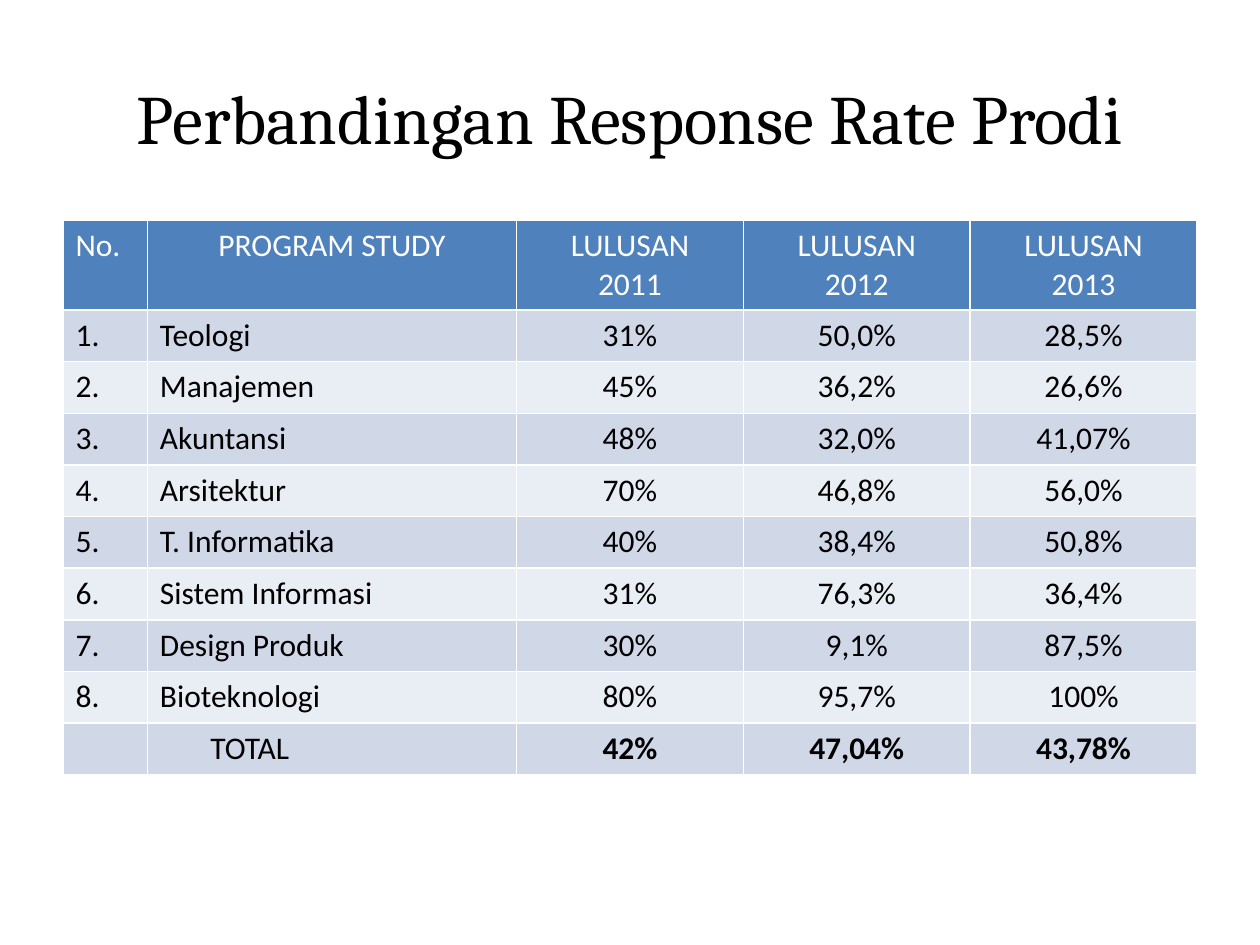
"""Build a slide comparing response rates of study programmes over three graduation years."""
import pptx
import pptx.dml.color
import pptx.enum.text
import pptx.util

BLACK = pptx.dml.color.RGBColor(0x00, 0x00, 0x00)
WHITE = pptx.dml.color.RGBColor(0xFF, 0xFF, 0xFF)
HEADER_BLUE = pptx.dml.color.RGBColor(0x4F, 0x81, 0xBD)
BANDS = [
    pptx.dml.color.RGBColor(0xE9, 0xED, 0xF4),
    pptx.dml.color.RGBColor(0xD0, 0xD8, 0xE8),
]
CENTER = pptx.enum.text.PP_ALIGN.CENTER
LEFT = pptx.enum.text.PP_ALIGN.LEFT

COLUMN_WIDTHS = [0.67, 2.93, 1.8, 1.8, 1.8]
HEADER_HEIGHT, ROW_HEIGHT = 0.71, 0.41
ROWS = [
    ["No.", "PROGRAM STUDY", "LULUSAN\n2011", "LULUSAN\n2012", "LULUSAN\n2013"],
    ["1.", "Teologi", "31%", "50,0%", "28,5%"],
    ["2.", "Manajemen", "45%", "36,2%", "26,6%"],
    ["3.", "Akuntansi", "48%", "32,0%", "41,07%"],
    ["4.", "Arsitektur", "70%", "46,8%", "56,0%"],
    ["5.", "T. Informatika", "40%", "38,4%", "50,8%"],
    ["6.", "Sistem Informasi", "31%", "76,3%", "36,4%"],
    ["7.", "Design Produk", "30%", "9,1%", "87,5%"],
    ["8.", "Bioteknologi", "80%", "95,7%", "100%"],
    ["", "TOTAL", "42%", "47,04%", "43,78%"],
]
TOTAL_ROW = len(ROWS) - 1

deck = pptx.Presentation()
deck.slide_width = pptx.util.Inches(10)
deck.slide_height = pptx.util.Inches(7.5)
page = deck.slides.add_slide(deck.slide_layouts[5])
margin = int(deck.slide_width * 0.05)
content_width = deck.slide_width - 2 * margin

title = page.shapes.title
title.left, title.top = margin, int(deck.slide_height * 0.04)
title.width, title.height = content_width, pptx.util.Inches(1.25)
title.text_frame.text = "Perbandingan Response Rate Prodi"
title.text_frame.vertical_anchor = pptx.enum.text.MSO_ANCHOR.MIDDLE
heading = title.text_frame.paragraphs[0]
heading.alignment = CENTER
heading.font.name = "Cambria"
heading.font.size = pptx.util.Pt(39.6)
heading.font.color.rgb = BLACK

table = page.shapes.add_table(
    len(ROWS), len(COLUMN_WIDTHS), margin, pptx.util.Inches(1.75), content_width,
    pptx.util.Inches(HEADER_HEIGHT + TOTAL_ROW * ROW_HEIGHT),
).table
for column, width in zip(table.columns, COLUMN_WIDTHS):
    column.width = pptx.util.Inches(width)

for row_index, values in enumerate(ROWS):
    is_header = row_index == 0
    table.rows[row_index].height = pptx.util.Inches(HEADER_HEIGHT if is_header else ROW_HEIGHT)
    for column_index, value in enumerate(values):
        cell = table.cell(row_index, column_index)
        cell.fill.solid()
        cell.fill.fore_color.rgb = HEADER_BLUE if is_header else BANDS[row_index % 2]
        cell.text = value
        centered = column_index > 1 or (is_header and column_index == 1)
        for para in cell.text_frame.paragraphs:
            para.alignment = CENTER if centered else LEFT
            para.font.name = "Calibri"
            para.font.size = pptx.util.Pt(18)
            para.font.bold = row_index == TOTAL_ROW and column_index > 1
            para.font.color.rgb = WHITE if is_header else BLACK

table.cell(TOTAL_ROW, 1).margin_left = pptx.util.Inches(0.5)

deck.save("out.pptx")
